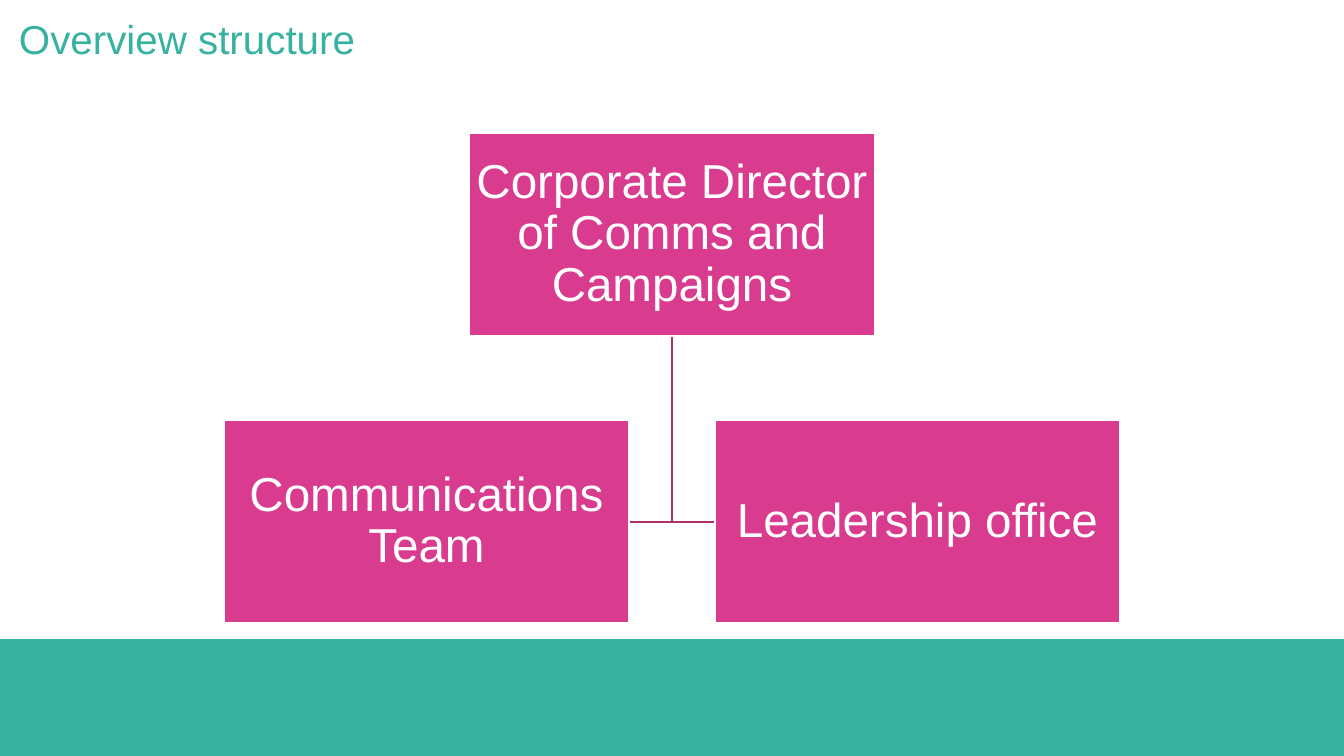
from pptx import Presentation
from pptx.dml.color import RGBColor
from pptx.enum.shapes import MSO_SHAPE
from pptx.enum.text import MSO_ANCHOR, PP_ALIGN
from pptx.util import Inches, Pt

COLORS = {"teal": "38B3A0", "title": "37B2A0", "pink": "D93B8E", "line": "AE2F72", "white": "FFFFFF"}

prs = Presentation()
prs.slide_width, prs.slide_height = Inches(13.33), Inches(7.5)
s = prs.slides.add_slide(prs.slide_layouts[6])


def rgb(name):
    return RGBColor.from_string(COLORS[name])


def write(sp, text, size, color, align, anchor, inset):
    tf = sp.text_frame
    tf.word_wrap = True
    tf.vertical_anchor = anchor
    tf.margin_left = tf.margin_right = Inches(inset)
    tf.margin_top = tf.margin_bottom = Inches(min(inset, 0.05))
    p = tf.paragraphs[0]
    p.alignment = align
    p.line_spacing = 0.9
    r = p.add_run()
    r.text = text
    r.font.name = "Arial"
    r.font.size = Pt(size)
    r.font.color.rgb = rgb(color)


band_top = Inches(6.34)
band = s.shapes.add_shape(MSO_SHAPE.RECTANGLE, 0, band_top, prs.slide_width, prs.slide_height - band_top)
band.shadow.inherit = False
band.fill.solid()
band.fill.fore_color.rgb = rgb("teal")
band.line.fill.background()

title = s.shapes.add_textbox(Inches(0.09), Inches(0.19), Inches(12.5), Inches(0.49))
write(title, "Overview structure", 28.8, "title", PP_ALIGN.LEFT, MSO_ANCHOR.BOTTOM, 0.1)

box_w, box_h = Inches(4.02), Inches(2.01)
half_gap = Inches(0.425)
mid_x = prs.slide_width // 2
top_y, team_y = Inches(1.32), Inches(4.17)
join_y = team_y + box_h // 2

for side in (1, -1):
    fb = s.shapes.build_freeform(mid_x, top_y + box_h)
    fb.add_line_segments([(mid_x, join_y), (mid_x + side * half_gap, join_y)], close=False)
    branch = fb.convert_to_shape()
    branch.shadow.inherit = False
    branch.fill.background()
    branch.line.color.rgb = rgb("line")
    branch.line.width = Pt(1.5)

boxes = [
    ("Corporate Director of Comms and Campaigns", mid_x - box_w // 2, top_y),
    ("Communications Team", mid_x - half_gap - box_w, team_y),
    ("Leadership office", mid_x + half_gap, team_y),
]
for text, x, y in boxes:
    sp = s.shapes.add_shape(MSO_SHAPE.RECTANGLE, x, y, box_w, box_h)
    sp.shadow.inherit = False
    sp.fill.solid()
    sp.fill.fore_color.rgb = rgb("pink")
    sp.line.color.rgb = rgb("white")
    sp.line.width = Pt(1.5)
    write(sp, text, 34, "white", PP_ALIGN.CENTER, MSO_ANCHOR.MIDDLE, 0.02)

prs.save("out.pptx")
